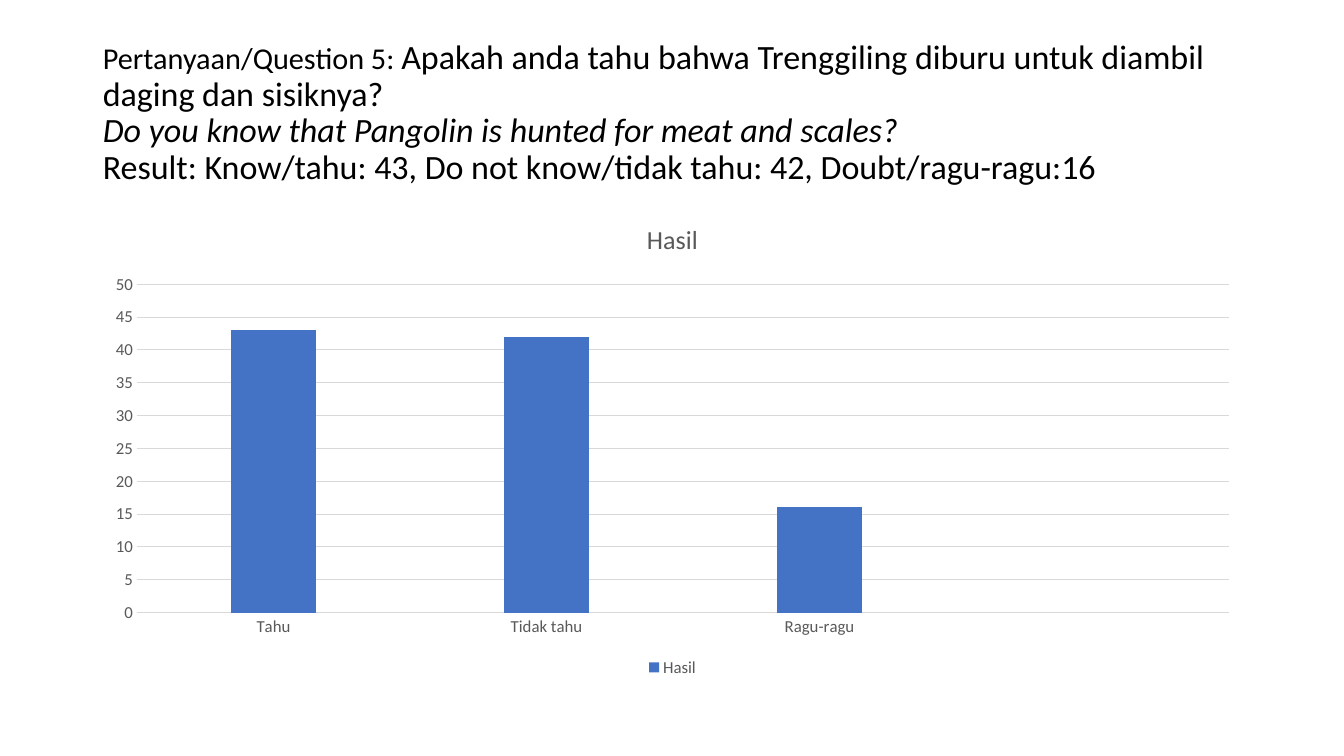
"""Build the survey slide for question 5 with its result chart."""
from pptx import Presentation
from pptx.chart.data import CategoryChartData
from pptx.dml.color import RGBColor
from pptx.enum.chart import XL_CHART_TYPE, XL_LEGEND_POSITION as LegendPos, XL_TICK_MARK as Tick
from pptx.enum.text import MSO_ANCHOR, MSO_AUTO_SIZE, PP_ALIGN
from pptx.util import Inches, Pt

COLORS = {k: RGBColor.from_string(v) for k, v in {
    "text": "000000", "label": "595959", "grid": "D9D9D9", "bar": "4472C4"}.items()}
FONT = "Calibri"


def style_font(font, size, color):
    font.name = FONT
    font.size = Pt(size)
    font.color.rgb = COLORS[color]


def style_line(line):
    line.color.rgb = COLORS["grid"]
    line.width = Pt(0.75)


prs = Presentation()
prs.slide_width, prs.slide_height = Inches(13.33), Inches(7.5)
s = prs.slides.add_slide(prs.slide_layouts[5])

title = s.shapes.title
title.left, title.top = Inches(0.92), Inches(0.4)
title.width, title.height = Inches(11.5), Inches(1.45)
tf = title.text_frame
tf.word_wrap = True
tf.auto_size = MSO_AUTO_SIZE.NONE
tf.vertical_anchor = MSO_ANCHOR.MIDDLE
p = tf.paragraphs[0]
p.alignment = PP_ALIGN.LEFT
p.line_spacing = 0.9
title_runs = [
    ("Pertanyaan/Question 5: ", 21.6, False, False),
    ("Apakah anda tahu bahwa Trenggiling diburu untuk diambil daging dan sisiknya?", 24.3, False, True),
    ("Do you know that Pangolin is hunted for meat and scales? ", 24.3, True, True),
    ("Result: Know/tahu: 43, Do not know/tidak tahu: 42, Doubt/ragu-ragu:16", 24.3, False, False),
]
for text, size, italic, ends_line in title_runs:
    r = p.add_run()
    r.text = text
    style_font(r.font, size, "text")
    r.font.italic = italic
    if ends_line:
        p.add_line_break()

data = CategoryChartData()
data.categories = ["Tahu", "Tidak tahu", "Ragu-ragu", ""]
data.add_series("Hasil", (43, 42, 16, None))
chart = s.shapes.add_chart(XL_CHART_TYPE.COLUMN_CLUSTERED, Inches(0.92), Inches(2),
                           Inches(11.5), Inches(4.76), data).chart
style_font(chart.font, 10, "text")

chart.has_title = True
p = chart.chart_title.text_frame.paragraphs[0]
r = p.add_run()
r.text = "Hasil"
style_font(r.font, 18.6, "label")
r.font.bold = False
chart.chart_title.include_in_layout = False

chart.has_legend = True
chart.legend.position = LegendPos.BOTTOM
chart.legend.include_in_layout = False
style_font(chart.legend.font, 12, "label")

for axis in (chart.category_axis, chart.value_axis):
    axis.major_tick_mark = axis.minor_tick_mark = Tick.NONE
    style_font(axis.tick_labels.font, 12, "label")
style_line(chart.category_axis.format.line)
value_axis = chart.value_axis
value_axis.format.line.fill.background()
value_axis.minimum_scale, value_axis.maximum_scale, value_axis.major_unit = 0, 50, 5
value_axis.has_major_gridlines = True
style_line(value_axis.major_gridlines.format.line)

plot = chart.plots[0]
plot.vary_by_categories = False
plot.gap_width, plot.overlap = 219, -27
fill = plot.series[0].format.fill
fill.solid()
fill.fore_color.rgb = COLORS["bar"]

prs.save("out.pptx")
